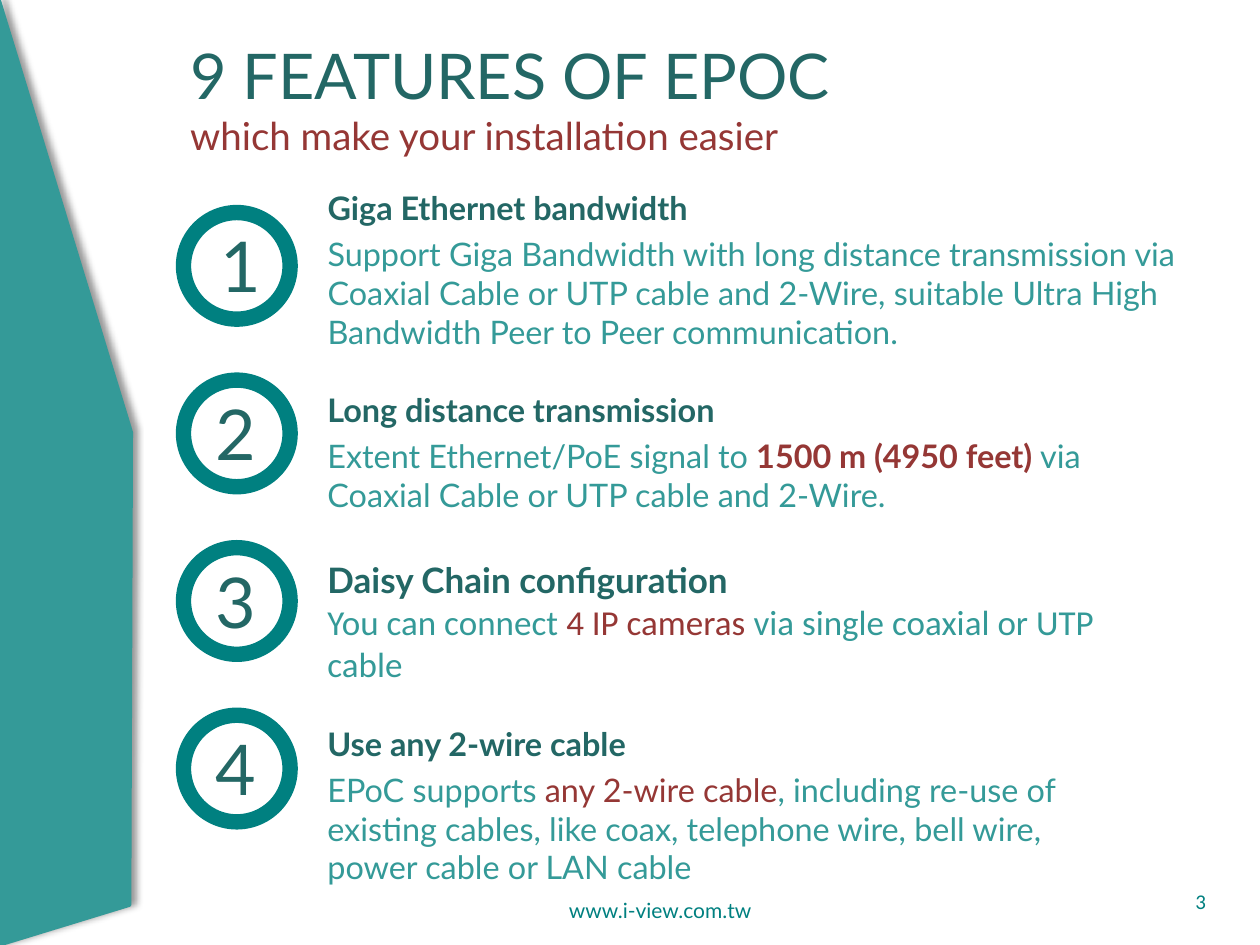
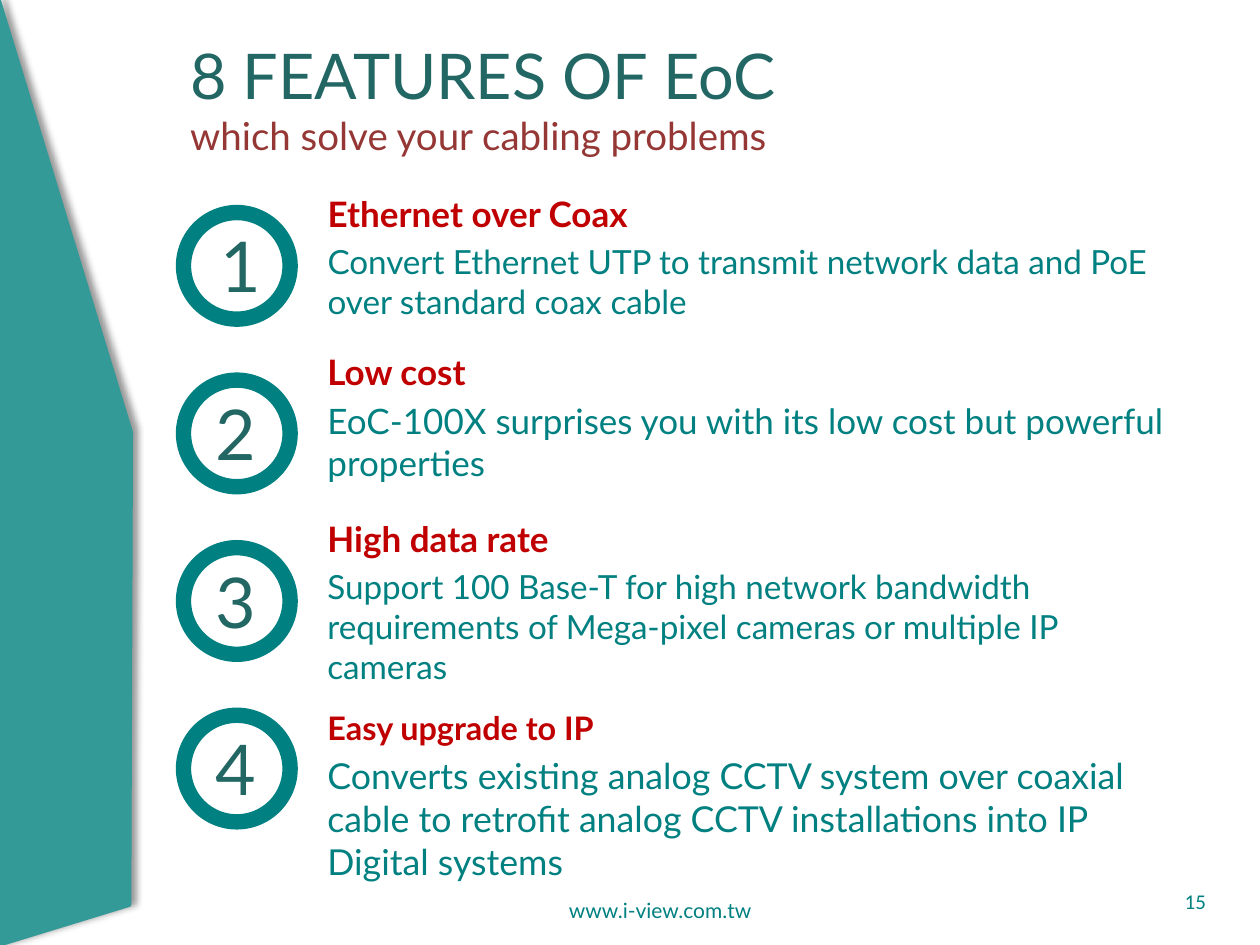
from lxml import etree
from pptx import Presentation
from pptx import util as u
from pptx.dml.color import RGBColor
from pptx.enum import shapes, text
from pptx.oxml import parse_xml
from pptx.oxml.ns import qn

COLOURS = {
    "band": "349A98",
    "ring": "008080",
    "dark": "236765",
    "accent": "953735",
    "alert": "C00000",
    "shadow": "000000",
}
WEBSITE = "www.i-view.com.tw"
COLUMNS, ROWS = 100, 75
RING_LEFT, RING_TOP, RING_SIZE, RING_STEP = 14.1, 16.4, 9.4, 13.3
TEXT_LEFT = 25
SHADOW = (
    '<a:effectLst xmlns:a="http://schemas.openxmlformats.org/drawingml/2006/main">'
    '<a:outerShdw blurRad="50800" dist="38100" dir="18900000" rotWithShape="0">'
    f'<a:srgbClr val="{COLOURS["shadow"]}"><a:alpha val="40000"/></a:srgbClr>'
    "</a:outerShdw></a:effectLst>"
)


class FeatureDeck:
    """Holds the deck style and the current slide, placing elements on a grid."""

    def __init__(self):
        self.deck = Presentation()
        self.deck.slide_width, self.deck.slide_height = u.Inches(10), u.Inches(7.5)
        self.page = None

    def frame(self, left, top, width, height):
        """Turn grid columns and rows into slide lengths."""
        column = self.deck.slide_width / COLUMNS
        row = self.deck.slide_height / ROWS
        return [u.Emu(round(length * unit)) for length, unit in
                zip((left, top, width, height), (column, row, column, row))]

    def new_page(self):
        """Start a slide with a title and a body placeholder."""
        self.page = self.deck.slides.add_slide(self.deck.slide_layouts[1])

    def box(self, area, holder=None, anchor=text.MSO_ANCHOR.TOP):
        """Place a placeholder or a new text box and return its text frame."""
        box = holder or self.page.shapes.add_textbox(*self.frame(*area))
        box.left, box.top, box.width, box.height = self.frame(*area)
        content = box.text_frame
        content.word_wrap = True
        content.auto_size = text.MSO_AUTO_SIZE.NONE
        content.vertical_anchor = anchor
        return content

    def style(self, font, size=None, colour=None, name=None, bold=None):
        """Set the given font properties."""
        if size:
            font.size = u.Pt(size)
        if colour:
            font.color.rgb = RGBColor.from_string(COLOURS[colour])
        if name:
            font.name = name
        if bold is not None:
            font.bold = bold

    def fill_para(self, para, spans, size, colour, name="Lato", bold=False,
                  align=text.PP_ALIGN.LEFT, before=0, spacing=1.0):
        """Fill a paragraph with plain strings or (text, colour, bold) spans."""
        para.alignment = align
        para.space_before, para.line_spacing = u.Pt(before), spacing
        properties = para._p.get_or_add_pPr()
        properties.set("marL", "0")
        properties.set("indent", "0")
        etree.SubElement(properties, qn("a:buNone"))
        self.style(para.font, size, colour, name, bold)
        for item in spans:
            words, tint, weight = (item, None, None) if isinstance(item, str) else item
            span = para.add_run()
            span.text = words
            self.style(span.font, colour=tint, bold=weight)

    def label(self, area, words, size, colour, name="Lato",
              align=text.PP_ALIGN.CENTER, anchor=text.MSO_ANCHOR.MIDDLE):
        """Add a one-line text box."""
        content = self.box(area, anchor=anchor)
        self.fill_para(content.paragraphs[0], [words], size, colour, name, align=align)

    def title(self, heading, subtitle):
        """Fill the two-line title."""
        content = self.box((14.1, 2.3, 71.1, 10.9), self.page.shapes.title,
                           text.MSO_ANCHOR.MIDDLE)
        para = content.paragraphs[0]
        self.fill_para(para, [heading], 36, "dark")
        para.add_line_break()
        span = para.add_run()
        span.text = subtitle
        self.style(span.font, 22, "accent")

    def shape(self, kind, area, colour, adjustment):
        """Add a filled preset shape with a matching outline."""
        shape = self.page.shapes.add_shape(kind, *self.frame(*area))
        shape.adjustments[0] = adjustment
        shape.shadow.inherit = False
        shape.fill.solid()
        shape.fill.fore_color.rgb = RGBColor.from_string(COLOURS[colour])
        shape.line.color.rgb = RGBColor.from_string(COLOURS[colour])
        shape.line.width = u.Pt(2)
        return shape

    def band(self):
        """Add the slanted side band with its shadow."""
        band = self.shape(shapes.MSO_SHAPE.DIAGONAL_STRIPE,
                          (-11.3, 1.7, 22.2, 71.7), "band", 0.5)
        band.rotation = 163
        effects = band._element.spPr.find(qn("a:effectLst"))
        effects.getparent().replace(effects, parse_xml(SHADOW))

    def footer(self, number):
        """Add the website and the page number."""
        self.label((35.2, 69.5, 34.4, 5.5), WEBSITE, 12, "ring")
        self.label((73.4, 69.5, 23.3, 4), str(number), 12, "ring", "Calibri",
                   text.PP_ALIGN.RIGHT)

    def ring(self, index):
        """Add a numbered ring in its row."""
        top = RING_TOP + index * RING_STEP
        self.shape(shapes.MSO_SHAPE.DONUT, (RING_LEFT, top, RING_SIZE, RING_SIZE),
                   "ring", 0.1)
        width = 6.3 if index else 7
        self.label((RING_LEFT + 1.5, top + 0.8, width, 7.7), str(index + 1), 40,
                   "dark", anchor=text.MSO_ANCHOR.TOP)

    def feature(self, index, colours, top, width, heading, details,
                sizes=(18.5, 18.5), spacing=1.0, gap=0.2, name="Lato"):
        """Add a ring, a bold heading and its details."""
        self.ring(index)
        holder = None if index else self.page.placeholders[1]
        content = self.box((TEXT_LEFT, top, width, 13.3), holder)
        self.fill_para(content.paragraphs[0], [heading], sizes[0], colours[0],
                       bold=True, spacing=spacing)
        self.fill_para(content.add_paragraph(), details, sizes[1], colours[1], name,
                       before=gap * sizes[1])

    def feature_page(self, number, heading, subtitle, colours, features):
        """Build a whole feature slide."""
        self.new_page()
        self.band()
        self.title(heading, subtitle)
        for index, feature in enumerate(features):
            self.feature(index, colours, **feature)
        self.footer(number)


EPOC_FEATURES = [
    dict(top=14.8, width=69.9, spacing=0.9, heading="Giga Ethernet bandwidth",
         details=["Support Giga Bandwidth with long distance transmission via Coaxial "
                  "Cable or UTP cable and 2-Wire, suitable Ultra High Bandwidth Peer "
                  "to Peer communication."]),
    dict(top=30.5, width=67.2, heading="Long distance transmission",
         details=["Extent Ethernet/PoE signal to ",
                  ("1500 m (4950 feet) ", "accent", True),
                  "via Coaxial Cable or UTP cable and 2-Wire."]),
    dict(top=43.8, width=64.8, sizes=(20, 20), gap=0, name="Calibri",
         heading="Daisy Chain configuration",
         details=["You can connect ", ("4 IP cameras ", "accent", None),
                  "via single coaxial or UTP cable"]),
    dict(top=57, width=64.8, heading="Use any 2-wire cable",
         details=["EPoC supports ", ("any 2-wire cable", "accent", None),
                  ", including re-use of existing cables, like coax, telephone wire, "
                  "bell wire, power cable or LAN cable"]),
]
EOC_FEATURES = [
    dict(top=14.8, width=69.9, sizes=(20, 19), heading="Ethernet over Coax",
         details=["Convert Ethernet UTP to transmit network data and PoE over "
                  "standard coax cable"]),
    dict(top=27.3, width=69.9, sizes=(20, 20), heading="Low cost",
         details=["EoC-100X surprises you with its low cost but powerful properties"]),
    dict(top=40.6, width=64.8, sizes=(20, 19), heading="High data rate",
         details=["Support 100 Base-T for high network bandwidth requirements of "
                  "Mega-pixel cameras or multiple IP cameras"]),
    dict(top=56.3, width=68.8, sizes=(18.5, 20.4), spacing=0.8,
         heading="Easy upgrade to IP",
         details=["Converts existing analog CCTV system over coaxial cable to retrofit "
                  "analog CCTV installations into IP Digital systems"]),
]


def main():
    """Build and save both feature slides."""
    show = FeatureDeck()
    show.feature_page(3, "9 FEATURES OF EPOC", "which make your installation easier",
                      ("dark", "band"), EPOC_FEATURES)
    show.feature_page(15, "8 FEATURES OF EoC", "which solve your cabling problems",
                      ("alert", "ring"), EOC_FEATURES)
    show.deck.save("out.pptx")


if __name__ == "__main__":
    main()
